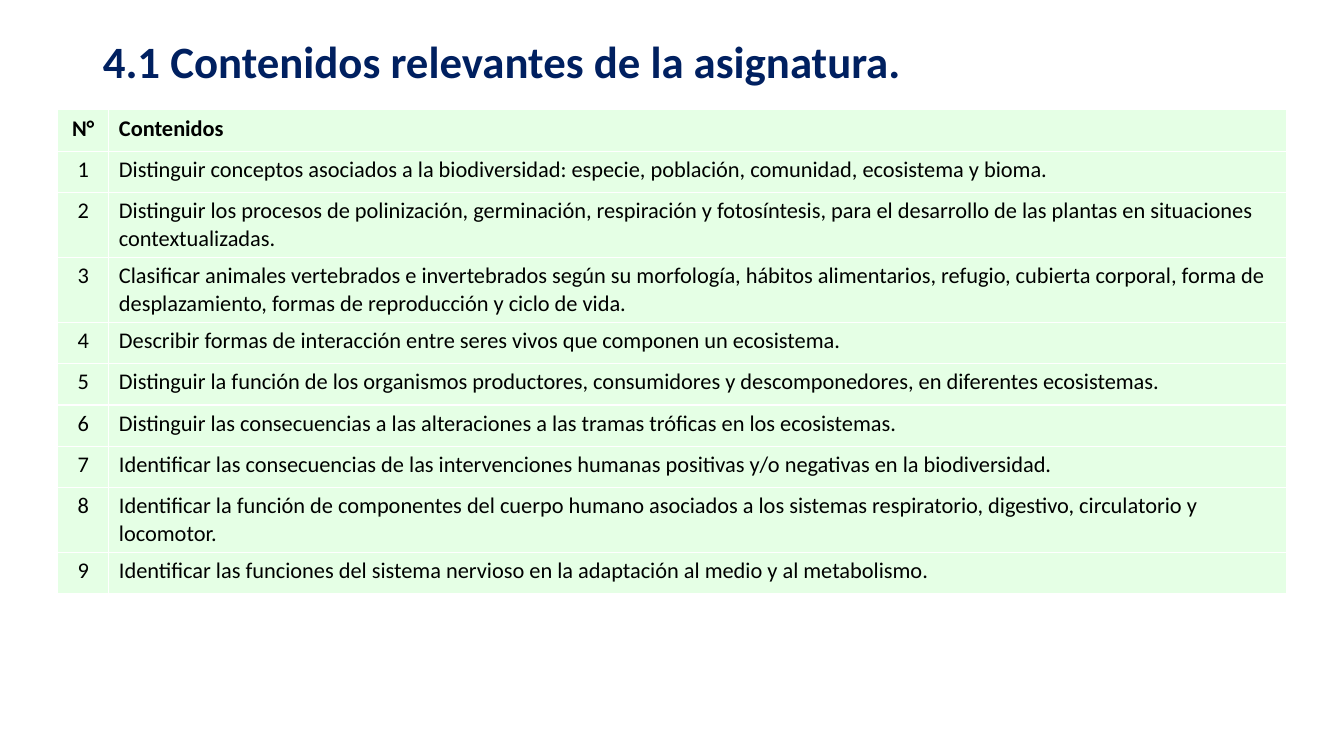
from pptx import Presentation
from pptx import util as u
from pptx.dml import color
from pptx.enum import text

COLORS = {"title": "002060", "ink": "000000", "row": "E5FFE5"}
FONT = "Calibri"
TITLE = "4.1 Contenidos relevantes de la asignatura."
CONTENTS = [
    "Distinguir conceptos asociados a la biodiversidad: especie, población, comunidad, ecosistema y bioma.",
    "Distinguir los procesos de polinización, germinación, respiración y fotosíntesis, para el desarrollo de las plantas en situaciones contextualizadas.",
    "Clasificar animales vertebrados e invertebrados según su morfología, hábitos alimentarios, refugio, cubierta corporal, forma de desplazamiento, formas de reproducción y ciclo de vida.",
    "Describir formas de interacción entre seres vivos que componen un ecosistema.",
    "Distinguir la función de los organismos productores, consumidores y descomponedores, en diferentes ecosistemas.",
    "Distinguir las consecuencias a las alteraciones a las tramas tróficas en los ecosistemas.",
    "Identificar las consecuencias de las intervenciones humanas positivas y/o negativas en la biodiversidad.",
    "Identificar la función de componentes del cuerpo humano asociados a los sistemas respiratorio, digestivo, circulatorio y locomotor.",
    "Identificar las funciones del sistema nervioso en la adaptación al medio y al metabolismo.",
]


def rgb(name):
    return color.RGBColor.from_string(COLORS[name])


def write(paragraph, words, size, ink, bold, align):
    paragraph.alignment = align
    run = paragraph.add_run()
    run.text = words
    run.font.name = FONT
    run.font.size = u.Pt(size)
    run.font.bold = bold
    run.font.color.rgb = rgb(ink)


def place_title(slide):
    heading = slide.shapes.title
    heading.left, heading.top = u.Inches(0.92), u.Inches(0.54)
    heading.width, heading.height = u.Inches(11.5), u.Inches(0.72)
    frame = heading.text_frame
    frame.word_wrap = True
    frame.auto_size = text.MSO_AUTO_SIZE.NONE
    frame.vertical_anchor = text.MSO_ANCHOR.MIDDLE
    frame.margin_bottom = u.Inches(0.59)
    frame.paragraphs[0].line_spacing = 0.9
    write(frame.paragraphs[0], TITLE, 32, "title", True, text.PP_ALIGN.LEFT)


def fill_cell(cell, words, bold, align):
    cell.fill.solid()
    cell.fill.fore_color.rgb = rgb("row")
    write(cell.text_frame.paragraphs[0], words, 16, "ink", bold, align)


def add_contents_table(slide):
    entries = [("N°", "Contenidos")]
    entries += [(str(number), content) for number, content in enumerate(CONTENTS, 1)]
    row_height = u.Inches(0.41)
    contents = slide.shapes.add_table(
        len(entries), 2, u.Inches(0.57), u.Inches(1.09),
        u.Inches(12.19), row_height * len(entries)).table
    for column, width in zip(contents.columns, (0.51, 11.68)):
        column.width = u.Inches(width)
    for index, (number, content) in enumerate(entries):
        contents.rows[index].height = row_height
        is_header = index == 0
        fill_cell(contents.cell(index, 0), number, is_header, text.PP_ALIGN.CENTER)
        fill_cell(contents.cell(index, 1), content, is_header, text.PP_ALIGN.LEFT)


def main():
    deck = Presentation()
    deck.slide_width, deck.slide_height = u.Inches(13.33), u.Inches(7.5)
    slide = deck.slides.add_slide(deck.slide_layouts[5])
    place_title(slide)
    add_contents_table(slide)
    deck.save("out.pptx")


if __name__ == "__main__":
    main()
